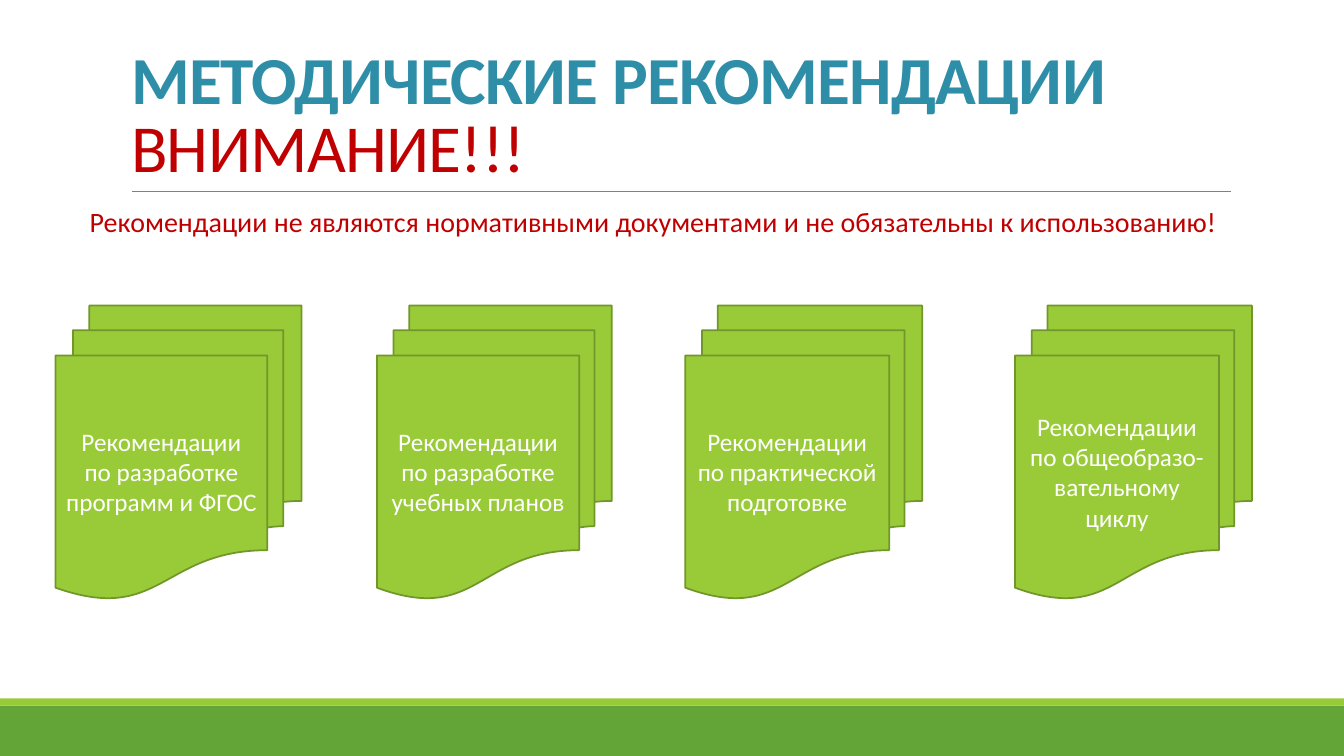
from pptx import Presentation
from pptx.dml.color import RGBColor
from pptx.enum.shapes import MSO_CONNECTOR, MSO_SHAPE
from pptx.enum.text import MSO_ANCHOR, MSO_AUTO_SIZE, PP_ALIGN
from pptx.oxml.ns import qn
from pptx.util import Cm, Pt
from lxml.etree import SubElement

COLORS = {
    "green": "63A537", "lime": "99CB38", "outline": "719629", "rule": "808080",
    "teal": "2E8EA8", "red": "C00000", "white": "FFFFFF",
}
FONT = "Calibri"
SLIDE_W, SLIDE_H = 33.87, 19.05

# Left edge, width and text of each stack of documents
DOCUMENTS = [
    (1.4, 6.2, "Рекомендации по разработке программ и ФГОС"),
    (9.5, 5.92, "Рекомендации по разработке учебных планов"),
    (17.27, 5.97, "Рекомендации по практической подготовке"),
    (25.58, 5.97, "Рекомендации по общеобразо-вательному циклу"),
]


def color(name):
    return RGBColor.from_string(COLORS[name])


def add_run(p, text, size, color_name, bold=False):
    r = p.add_run()
    r.text = text
    r.font.name = FONT
    r.font.size = Pt(size)
    r.font.bold = bold
    r.font.color.rgb = color(color_name)
    return r


def add_filled(slide, kind, box, fill, line=None):
    sp = slide.shapes.add_shape(kind, *map(Cm, box))
    sp.shadow.inherit = False
    sp.fill.solid()
    sp.fill.fore_color.rgb = color(fill)
    if line:
        sp.line.color.rgb = color(line)
        sp.line.width = Pt(1.25)
    else:
        sp.line.fill.background()
    return sp


def add_footer(slide, box):
    left, top, width, height = box
    strip = 0.18
    add_filled(slide, MSO_SHAPE.RECTANGLE,
               (left, top + strip, width, height - strip), "green")
    add_filled(slide, MSO_SHAPE.RECTANGLE, (left, top, width, strip), "lime")


def add_header(slide, box):
    left, top, width, height = box
    # Rule under the title
    y = Cm(top + height)
    rule = slide.shapes.add_connector(
        MSO_CONNECTOR.STRAIGHT, Cm(left + 0.28), y, Cm(left + width + 0.02), y)
    rule.line.color.rgb = color("rule")
    rule.line.width = Pt(0.5)
    SubElement(rule._element.spPr, qn("a:effectLst"))
    # Title
    title = slide.shapes.title
    title.left, title.top, title.width, title.height = map(Cm, box)
    tf = title.text_frame
    tf.word_wrap = True
    tf.auto_size = MSO_AUTO_SIZE.NONE
    tf.vertical_anchor = MSO_ANCHOR.BOTTOM
    p = tf.paragraphs[0]
    p.alignment = PP_ALIGN.LEFT
    p.line_spacing = 0.85
    for text, name, bold in (("МЕТОДИЧЕСКИЕ РЕКОМЕНДАЦИИ ", "teal", True),
                             ("ВНИМАНИЕ!!!", "red", False)):
        r = add_run(p, text, 48, name, bold)
        r.font._element.set("spc", "-50")


def add_notice(slide, box):
    tf = slide.shapes.add_textbox(*map(Cm, box)).text_frame
    tf.word_wrap = True
    tf.margin_left = Cm(0.25)
    tf.margin_right = 0
    p = tf.paragraphs[0]
    p.line_spacing = 0.9
    add_run(p, "Рекомендации не являются нормативными документами "
               "и не обязательны к использованию!", 20, "red")


def add_documents(slide, box, text):
    sp = add_filled(slide, MSO_SHAPE.FLOWCHART_MULTIDOCUMENT, box, "lime", "outline")
    tf = sp.text_frame
    tf.word_wrap = True
    tf.vertical_anchor = MSO_ANCHOR.MIDDLE
    p = tf.paragraphs[0]
    p.alignment = PP_ALIGN.CENTER
    add_run(p, text, 18, "white")


def main():
    prs = Presentation()
    prs.slide_width, prs.slide_height = Cm(SLIDE_W), Cm(SLIDE_H)
    slide = prs.slides.add_slide(prs.slide_layouts[5])
    add_footer(slide, (0, 17.6, SLIDE_W, SLIDE_H - 17.6))
    add_header(slide, (3.05, 0.79, 27.94, 4.04))
    add_notice(slide, (2.01, 5.13, 30.02, 11.18))
    for left, width, text in DOCUMENTS:
        add_documents(slide, (left, 7.7, width, 7.39), text)
    prs.save("out.pptx")


if __name__ == "__main__":
    main()
